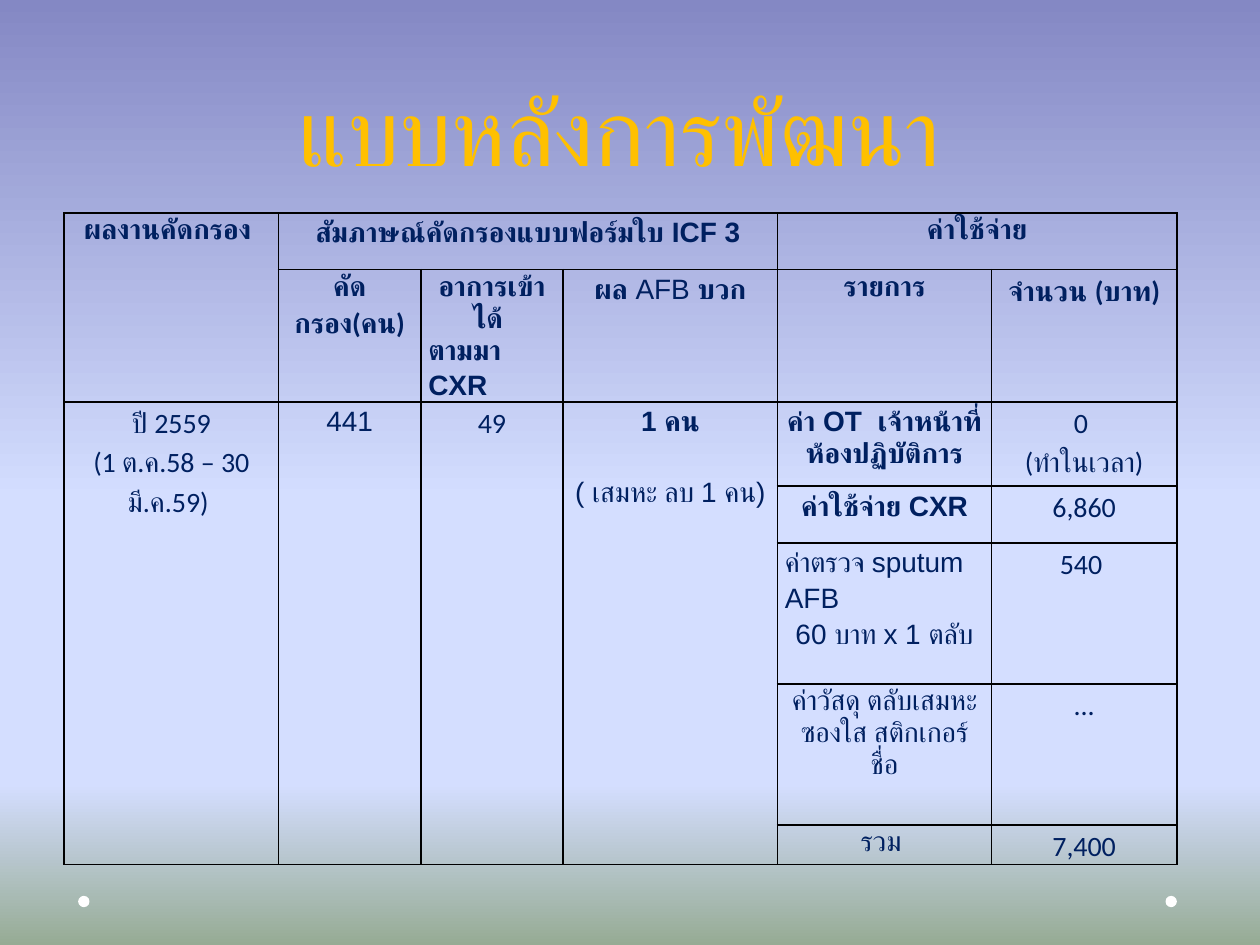
from copy import deepcopy
from dataclasses import dataclass

from pptx import Presentation
from pptx.dml.color import RGBColor
from pptx.enum.shapes import MSO_SHAPE
from pptx.enum.text import MSO_ANCHOR, MSO_AUTO_SIZE, PP_ALIGN
from pptx.oxml import parse_xml
from pptx.oxml.ns import nsdecls, qn
from pptx.util import Inches, Pt


@dataclass(frozen=True)
class Theme:
    title_font: str = "TeX Gyre Pagella"
    title_size: int = 54
    title_leading: int = 58
    title_color: str = "FFC000"
    cell_size: int = 16
    cell_leading: float = 1.15
    cell_color: str = "002060"
    border_color: str = "000000"
    border_width: int = 1
    dot_color: str = "FFFFFF"
    sky: tuple = ((0, "8488C4"), (0.53, "D4DEFF"), (0.83, "D4DEFF"), (1, "96AB94"))


@dataclass(frozen=True)
class Box:
    left: float
    top: float
    width: float
    height: float

    def lengths(self):
        return [Inches(v) for v in (self.left, self.top, self.width, self.height)]


@dataclass(frozen=True)
class Line:
    """One paragraph: spans of (text, font, bold)."""
    spans: tuple
    align: PP_ALIGN = PP_ALIGN.CENTER
    before: int = 0


THEME = Theme()


def calibri(text, bold=False):
    return text, "Calibri", bold


def arial(text, bold=False):
    return text, "Arial", bold


def line(*spans, **options):
    return Line(spans, **options)


COLUMNS = (1.7, 1.13, 1.13, 1.7, 1.7, 1.47)
ROWS = (0.45, 0.9, 0.67, 0.45, 1.12, 1.12, 0.22)

# (first row, first column, last row, last column)
MERGES = ((0, 0, 1, 0), (0, 1, 0, 3), (0, 4, 0, 5),
          *((2, column, 6, column) for column in range(4)))

HEADINGS = {
    (0, 0): [line(calibri("ผลงานคัดกรอง ", True))],
    (0, 1): [line(calibri("สัมภาษณ์คัดกรองแบบฟอร์มใบ ", True), arial("ICF 3", True))],
    (0, 4): [line(calibri("ค่าใช้จ่าย", True))],
    (1, 1): [line(calibri("คัดกรอง(คน)", True))],
    (1, 2): [line(calibri("อาการเข้าได้ ", True)),
             line(calibri("ตามมา ", True), arial("CXR", True), align=PP_ALIGN.LEFT)],
    (1, 3): [line(calibri("ผล ", True), arial("AFB "), arial("บวก", True))],
    (1, 4): [line(calibri("รายการ", True))],
    (1, 5): [line(calibri("จำนวน (บาท)", True))],
}
RESULTS = {
    (2, 0): [line(calibri("ปี 2559")), line(calibri("(1 ต.ค.58 – 30 มี.ค.59) "))],
    (2, 1): [line(arial("441"))],
    (2, 2): [line(calibri("49"))],
    (2, 3): [line(arial("1 คน", True)), line(arial("( เสมหะ ลบ 1 คน)"), before=20)],
}
COSTS = {
    (2, 4): [line(calibri("ค่า ", True), arial("OT  เจ้าหน้าที่ห้องปฏิบัติการ", True))],
    (2, 5): [line(calibri("0 ")), line(calibri("(ทำในเวลา)"))],
    (3, 4): [line(calibri("ค่าใช้จ่าย ", True), arial("CXR", True))],
    (3, 5): [line(calibri("6,860"))],
    (4, 4): [line(calibri("ค่าตรวจ "), arial("sputum AFB"), align=PP_ALIGN.LEFT),
             line(arial("60 บาท x 1 ตลับ"))],
    (4, 5): [line(calibri("540 "))],
    (5, 4): [line(calibri("ค่าวัสดุ ตลับเสมหะ ซองใส สติกเกอร์ ชื่อ"))],
    (5, 5): [line(calibri("..."))],
    (6, 4): [line(calibri("รวม "))],
    (6, 5): [line(calibri("7,400"))],
}


def format_font(font, name, size, color, bold=False):
    font.name, font.size, font.bold = name, Pt(size), bold
    font.color.rgb = RGBColor.from_string(color)


def paint_background(page):
    fill = page.background.fill
    fill.gradient()
    fill.gradient_angle = 270
    stop_list = page.element.find(".//" + qn("a:gsLst"))
    while len(stop_list) < len(THEME.sky):
        stop_list.append(deepcopy(stop_list[0]))
    for stop, (position, color) in zip(fill.gradient_stops, THEME.sky):
        stop.position = position
        stop.color.rgb = RGBColor.from_string(color)


def add_corner_dots(page, box):
    """Place a dot at the left and right end of the box, as wide as it is high."""
    size = box.height
    for left in (box.left, box.left + box.width - size):
        dot = page.shapes.add_shape(
            MSO_SHAPE.OVAL, *Box(left, box.top, size, size).lengths())
        dot.shadow.inherit = False
        dot.fill.solid()
        dot.fill.fore_color.rgb = RGBColor.from_string(THEME.dot_color)
        dot.line.fill.background()


def place_title(page, box, text):
    title = page.shapes.title
    title.left, title.top, title.width, title.height = box.lengths()
    frame = title.text_frame
    frame.text = text
    frame.word_wrap = True
    frame.auto_size = MSO_AUTO_SIZE.NONE
    frame.vertical_anchor = MSO_ANCHOR.BOTTOM
    para = frame.paragraphs[0]
    para.alignment = PP_ALIGN.CENTER
    para.line_spacing = Pt(THEME.title_leading)
    format_font(para.runs[0].font, THEME.title_font, THEME.title_size,
                THEME.title_color)


def draw_borders(cell):
    properties = cell._tc.get_or_add_tcPr()
    for index, side in enumerate(("lnL", "lnR", "lnT", "lnB")):
        properties.insert(index, parse_xml(
            f'<a:{side} {nsdecls("a")} w="{Pt(THEME.border_width)}"><a:solidFill>'
            f'<a:srgbClr val="{THEME.border_color}"/></a:solidFill></a:{side}>'))


def write_cell(cell, lines):
    frame = cell.text_frame
    for index, content in enumerate(lines):
        para = frame.add_paragraph() if index else frame.paragraphs[0]
        para.alignment = content.align
        para.line_spacing = THEME.cell_leading
        para.space_before = Pt(content.before)
        for text, font, bold in content.spans:
            span = para.add_run()
            span.text = text
            format_font(span.font, font, THEME.cell_size, THEME.cell_color, bold)


def add_screening_table(page, box):
    table = page.shapes.add_table(len(ROWS), len(COLUMNS), *box.lengths()).table
    table.first_row = table.horz_banding = False
    for column, width in zip(table.columns, COLUMNS):
        column.width = Inches(width)
    for row, height in zip(table.rows, ROWS):
        row.height = Inches(height)
    for cell in table.iter_cells():
        cell.margin_left = cell.margin_right = Inches(0.06)
        cell.margin_top = cell.margin_bottom = 0
        cell.fill.background()
        draw_borders(cell)
        cell.text_frame.paragraphs[0].font.size = Pt(1)
    for top, left, bottom, right in MERGES:
        table.cell(top, left).merge(table.cell(bottom, right))
    for position, lines in {**HEADINGS, **RESULTS, **COSTS}.items():
        write_cell(table.cell(*position), lines)


def main():
    deck = Presentation()
    deck.slide_width, deck.slide_height = Inches(10), Inches(7.5)
    page = deck.slides.add_slide(deck.slide_layouts[5])
    paint_background(page)
    add_corner_dots(page, Box(0.62, 7.11, 8.72, 0.09))
    place_title(page, Box(0.51, 0.21, 9, 1.31), "แบบหลังการพัฒนา ")
    add_screening_table(page, Box(0.51, 1.69, sum(COLUMNS), sum(ROWS)))
    deck.save("out.pptx")


if __name__ == "__main__":
    main()
